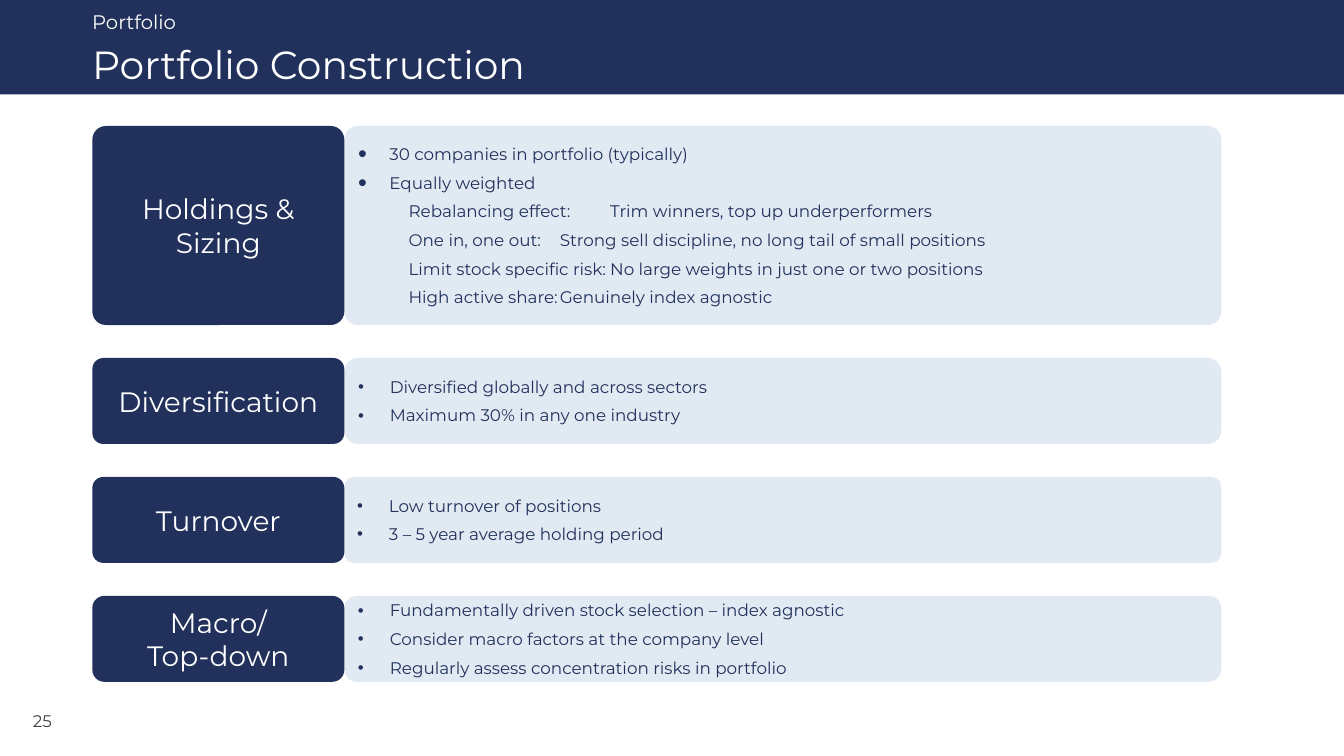
import pptx
import pptx.util
import pptx.dml.color
import pptx.enum.shapes
import pptx.enum.text
import pptx.oxml
import pptx.oxml.ns
import lxml.etree

Pt = pptx.util.Pt
ANCHOR = pptx.enum.text.MSO_ANCHOR
ALIGN = pptx.enum.text.PP_ALIGN
SHAPES = pptx.enum.shapes.MSO_SHAPE

FONT = "Montserrat"
COLORS = {"navy": "21315C", "panel": "9DB9D5", "white": "FFFFFF", "number": "414141"}

SECTION = "Portfolio"
TITLE = "Portfolio Construction"
PAGE_NUMBER = "25"
ROWS = [
    {"label": ["Holdings & Sizing"], "height": 142.2, "inset": 0, "indent": 22.3,
     "bullet_size": 150, "corners": (0.068, 0.067),
     "bullets": ["30 companies in portfolio (typically)", "Equally weighted"],
     "details": [
         ("Rebalancing effect:", "Trim winners, top up underperformers", 188.5),
         ("One in, one out:", "Strong sell discipline, no long tail of small positions", 226),
         ("Limit stock specific risk:", "No large weights in just one or two positions", 185),
         ("High active share:", "Genuinely index agnostic", 189)]},
    {"label": ["Diversification"], "height": 61.4, "inset": 3.6, "indent": 22.6,
     "bullet_size": 100, "corners": (0.127, 0.157), "details": [],
     "bullets": ["Diversified globally and across sectors", "Maximum 30% in any one industry"]},
    {"label": ["Turnover"], "height": 61.4, "inset": 3.6, "indent": 22.8,
     "bullet_size": 100, "corners": (0.127, 0.111), "details": [],
     "bullets": ["Low turnover of positions", "3 – 5 year average holding period"]},
    {"label": ["Macro/", "Top-down"], "height": 61.4, "inset": 3.6, "indent": 22.8,
     "bullet_size": 100, "corners": (0.139, 0.145), "details": [],
     "bullets": ["Fundamentally driven stock selection – index agnostic",
                 "Consider macro factors at the company level",
                 "Regularly assess concentration risks in portfolio"]},
]

SLIDE_WIDTH, SLIDE_HEIGHT = 960, 540
LEFT, LABEL_WIDTH, PANEL_WIDTH = 66, 180, 626.4
ROWS_TOP, ROW_GAP = 90, 23.55
DETAIL_INDENT = 36


def rgb(name):
    return pptx.dml.color.RGBColor.from_string(COLORS[name])


def add_run(paragraph, text, size, color):
    run = paragraph.add_run()
    run.text = text
    run.font.name = FONT
    run.font.size = Pt(size)
    run.font.color.rgb = rgb(color)


def add_child(parent, tag, **attributes):
    child = lxml.etree.SubElement(parent, pptx.oxml.ns.qn(tag))
    for name, value in attributes.items():
        child.set(name, str(value))
    return child


def set_frame(frame, anchor, horizontal, vertical):
    frame.word_wrap = True
    frame.auto_size = pptx.enum.text.MSO_AUTO_SIZE.NONE
    frame.vertical_anchor = anchor
    frame.margin_left = frame.margin_right = Pt(horizontal)
    frame.margin_top = frame.margin_bottom = Pt(vertical)


def place(shape, left, top, width, height):
    shape.left, shape.top = Pt(left), Pt(top)
    shape.width, shape.height = Pt(width), Pt(height)


def fill_heading(placeholder, text, size, top, height, anchor):
    place(placeholder, 65.8, top, 846.7, height)
    frame = placeholder.text_frame
    set_frame(frame, anchor, 0, 0)
    paragraph = frame.paragraphs[0]
    paragraph.alignment = ALIGN.LEFT
    paragraph.space_before, paragraph.space_after = Pt(0), Pt(4)
    properties = paragraph._p.get_or_add_pPr()
    properties.set("marL", "0")
    properties.set("indent", "0")
    add_child(properties, "a:buNone")
    add_run(paragraph, text, size, "white")


def add_block(slide, kind, left, top, width, height, color, corner=None):
    shape = slide.shapes.add_shape(kind, Pt(left), Pt(top), Pt(width), Pt(height))
    shape.shadow.inherit = False
    shape.fill.solid()
    shape.fill.fore_color.rgb = rgb(color)
    shape.line.fill.background()
    if corner is not None:
        shape.adjustments[0] = corner
    return shape


def next_paragraph(frame, index):
    paragraph = frame.paragraphs[0] if index == 0 else frame.add_paragraph()
    paragraph.alignment = ALIGN.LEFT
    paragraph.space_after = Pt(6)
    return paragraph, paragraph._p.get_or_add_pPr()


def add_panel(slide, row, top):
    panel = add_block(slide, SHAPES.ROUNDED_RECTANGLE, LEFT + LABEL_WIDTH, top,
                      PANEL_WIDTH, row["height"], "panel", row["corners"][1])
    color = panel.fill._xPr.find(".//" + pptx.oxml.ns.qn("a:srgbClr"))
    add_child(color, "a:alpha", val=30000)
    frame = panel.text_frame
    set_frame(frame, ANCHOR.MIDDLE, 7.2, row["inset"])
    for index, text in enumerate(row["bullets"]):
        paragraph, properties = next_paragraph(frame, index)
        properties.set("marL", str(Pt(row["indent"])))
        properties.set("indent", str(-Pt(row["indent"])))
        add_child(properties, "a:buSzPct", val=row["bullet_size"] * 1000)
        add_child(properties, "a:buFont", typeface="Arial")
        add_child(properties, "a:buChar", char="•")
        add_run(paragraph, text, 12, "navy")
    for index, (name, meaning, stop) in enumerate(row["details"], len(row["bullets"])):
        paragraph, properties = next_paragraph(frame, index)
        paragraph.level = 1
        properties.set("marL", str(Pt(DETAIL_INDENT)))
        properties.set("indent", "0")
        add_child(properties, "a:buNone")
        tabs = add_child(properties, "a:tabLst")
        add_child(tabs, "a:tab", pos=Pt(stop), algn="l")
        add_run(paragraph, name + "\t" + meaning, 12, "navy")


def add_label(slide, row, top):
    label = add_block(slide, SHAPES.ROUNDED_RECTANGLE, LEFT, top, LABEL_WIDTH,
                      row["height"], "navy", row["corners"][0])
    set_frame(label.text_frame, ANCHOR.MIDDLE, 7.2, 3.6)
    paragraph = label.text_frame.paragraphs[0]
    paragraph.alignment = ALIGN.CENTER
    for index, line in enumerate(row["label"]):
        if index:
            paragraph.add_line_break()
        add_run(paragraph, line, 20, "white")


def main():
    presentation = pptx.Presentation()
    presentation.slide_width, presentation.slide_height = Pt(SLIDE_WIDTH), Pt(SLIDE_HEIGHT)
    slide = presentation.slides.add_slide(presentation.slide_layouts[1])

    header = add_block(slide, SHAPES.RECTANGLE, 0, 0, SLIDE_WIDTH, 67.5, "navy")
    header.element.getparent().insert(2, header.element)
    fill_heading(slide.placeholders[1], SECTION, 14, 6.5, 17.3, ANCHOR.BOTTOM)
    fill_heading(slide.shapes.title, TITLE, 28, 23.8, 43.9, ANCHOR.MIDDLE)

    top = ROWS_TOP
    for row in ROWS:
        add_panel(slide, row, top)
        add_label(slide, row, top)
        top += row["height"] + ROW_GAP

    number = slide.shapes.add_textbox(Pt(16.5), Pt(504), Pt(47.5), Pt(28.8))
    set_frame(number.text_frame, ANCHOR.TOP, 7.2, 3.6)
    add_run(number.text_frame.paragraphs[0], PAGE_NUMBER, 12, "number")

    presentation.save("out.pptx")


if __name__ == "__main__":
    main()
